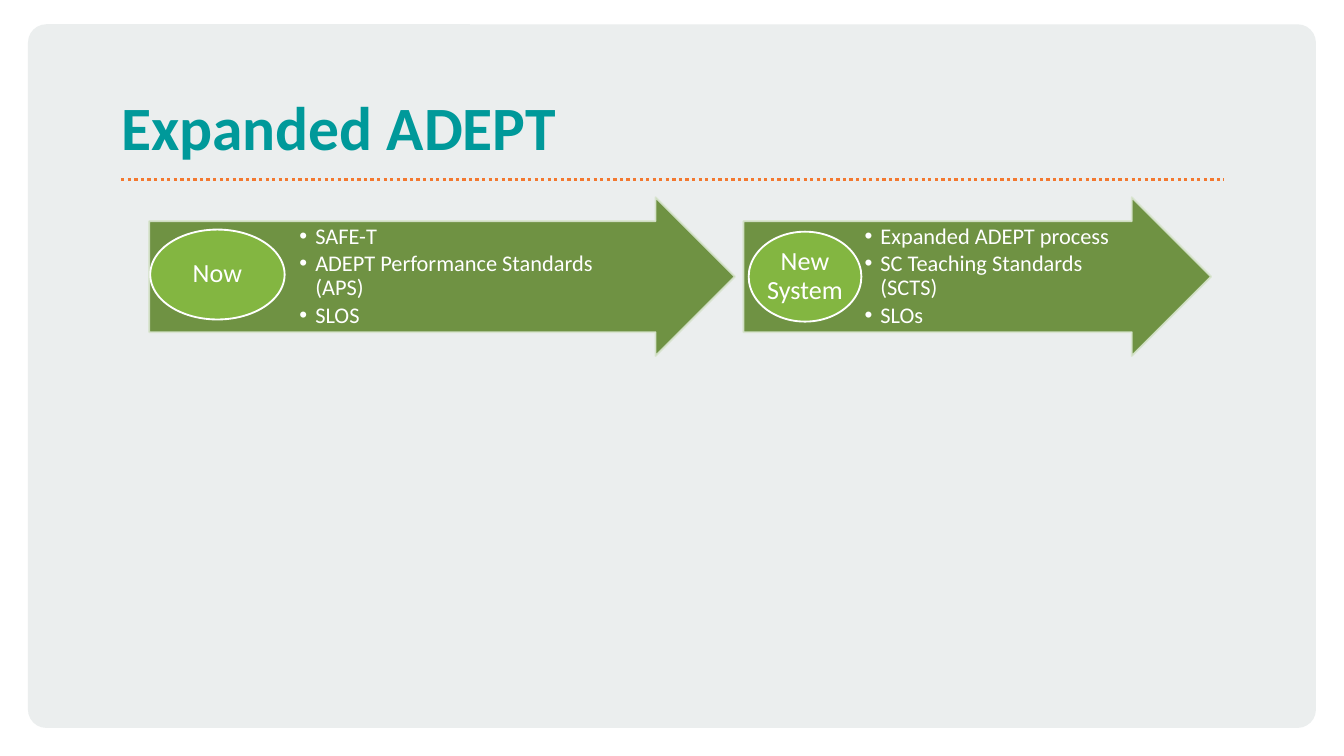
from pptx import Presentation
from pptx.dml.color import RGBColor
from pptx.enum.dml import MSO_LINE
from pptx.enum.shapes import MSO_CONNECTOR, MSO_SHAPE
from pptx.enum.text import MSO_ANCHOR, PP_ALIGN
from pptx.oxml.ns import qn
from pptx.util import Cm, Pt
from lxml.etree import SubElement


def color(hex_code):
    return RGBColor.from_string(hex_code)


def add_filled(kind, left, top, width, height, fill, line=None):
    shape = slide.shapes.add_shape(kind, Cm(left), Cm(top), Cm(width), Cm(height))
    shape.shadow.inherit = False
    shape.fill.solid()
    shape.fill.fore_color.rgb = color(fill)
    if line:
        shape.line.color.rgb = color(line)
        shape.line.width = Pt(1)
    else:
        shape.line.fill.background()
    return shape


prs = Presentation()
prs.slide_width, prs.slide_height = Cm(25.4), Cm(14.29)
slide = prs.slides.add_slide(prs.slide_layouts[5])

# Background panel
panel = add_filled(MSO_SHAPE.ROUNDED_RECTANGLE, 0.53, 0.46, 24.34, 13.3, "EBEEEE")
panel.adjustments[0] = 0.026

# Title, in front of the panel
title = slide.shapes.title
panel.element.addnext(title.element)
title.left, title.top, title.width, title.height = Cm(2.29), Cm(0.41), Cm(20.83), Cm(2.67)
frame = title.text_frame
frame.margin_left = frame.margin_right = frame.margin_top = frame.margin_bottom = 0
frame.vertical_anchor = MSO_ANCHOR.BOTTOM
frame.text = "Expanded ADEPT"
heading = frame.paragraphs[0]
heading.alignment = PP_ALIGN.LEFT
heading.line_spacing = 0.85
heading.font.name, heading.font.size, heading.font.bold = "Calibri", Pt(33), True
heading.font.color.rgb = color("00999A")

# Dotted rule under the title
rule = slide.shapes.add_connector(MSO_CONNECTOR.STRAIGHT, Cm(2.29), Cm(3.39), Cm(23.14), Cm(3.39))
rule.line.color.rgb = color("F3782F")
rule.line.width = Pt(1.75)
rule.line.dash_style = MSO_LINE.ROUND_DOT
SubElement(rule.element.spPr, qn("a:effectLst"))

# Stages: arrow left, width, text indent; oval left, top, width; label; points
stages = [
    (2.82, 11.07, 2.84, 2.84, 4.34, 2.54, "Now",
     ["SAFE-T", "ADEPT Performance Standards (APS)", "SLOS"]),
    (14.05, 8.84, 2.29, 14.15, 4.38, 2.13, "New System",
     ["Expanded ADEPT process", "SC Teaching Standards (SCTS)", "SLOs"]),
]
for left, width, indent, oval_left, oval_top, oval_width, label, points in stages:
    # Arrow with its bulleted points
    arrow = add_filled(MSO_SHAPE.RIGHT_ARROW, left, 3.73, width, 3, "628831", "D9E5CF")
    arrow.adjustments[0], arrow.adjustments[1] = 0.7, 0.5
    for tint in arrow.element.spPr.iter(qn("a:srgbClr")):
        SubElement(tint, qn("a:alpha"), val="90000")
    frame = arrow.text_frame
    frame.word_wrap = True
    frame.vertical_anchor = MSO_ANCHOR.MIDDLE
    frame.margin_left, frame.margin_right = Cm(indent), Cm(0.64)
    frame.margin_top = frame.margin_bottom = Cm(0.03)
    frame.text = "\n".join(points)
    for point in frame.paragraphs:
        point.alignment = PP_ALIGN.LEFT
        point.line_spacing = 0.9
        point.space_after = Pt(1.8)
        properties = point._p.get_or_add_pPr()
        properties.set("marL", str(Cm(0.3)))
        properties.set("indent", str(-Cm(0.3)))
        SubElement(properties, qn("a:buFont"), typeface="Arial")
        SubElement(properties, qn("a:buChar"), char="•")
        point.font.name, point.font.size = "Calibri", Pt(12)
        point.font.color.rgb = color("FFFFFF")

    # Oval with the stage label
    oval = add_filled(MSO_SHAPE.OVAL, oval_left, oval_top, oval_width, 1.7, "83B641", "FFFFFF")
    frame = oval.text_frame
    frame.word_wrap = True
    frame.vertical_anchor = MSO_ANCHOR.MIDDLE
    frame.margin_left = frame.margin_right = frame.margin_top = frame.margin_bottom = Cm(0.03)
    frame.text = label
    caption = frame.paragraphs[0]
    caption.alignment = PP_ALIGN.CENTER
    caption.line_spacing = 0.9
    caption.font.name, caption.font.size = "Calibri", Pt(14)
    caption.font.color.rgb = color("FFFFFF")

prs.save("out.pptx")
